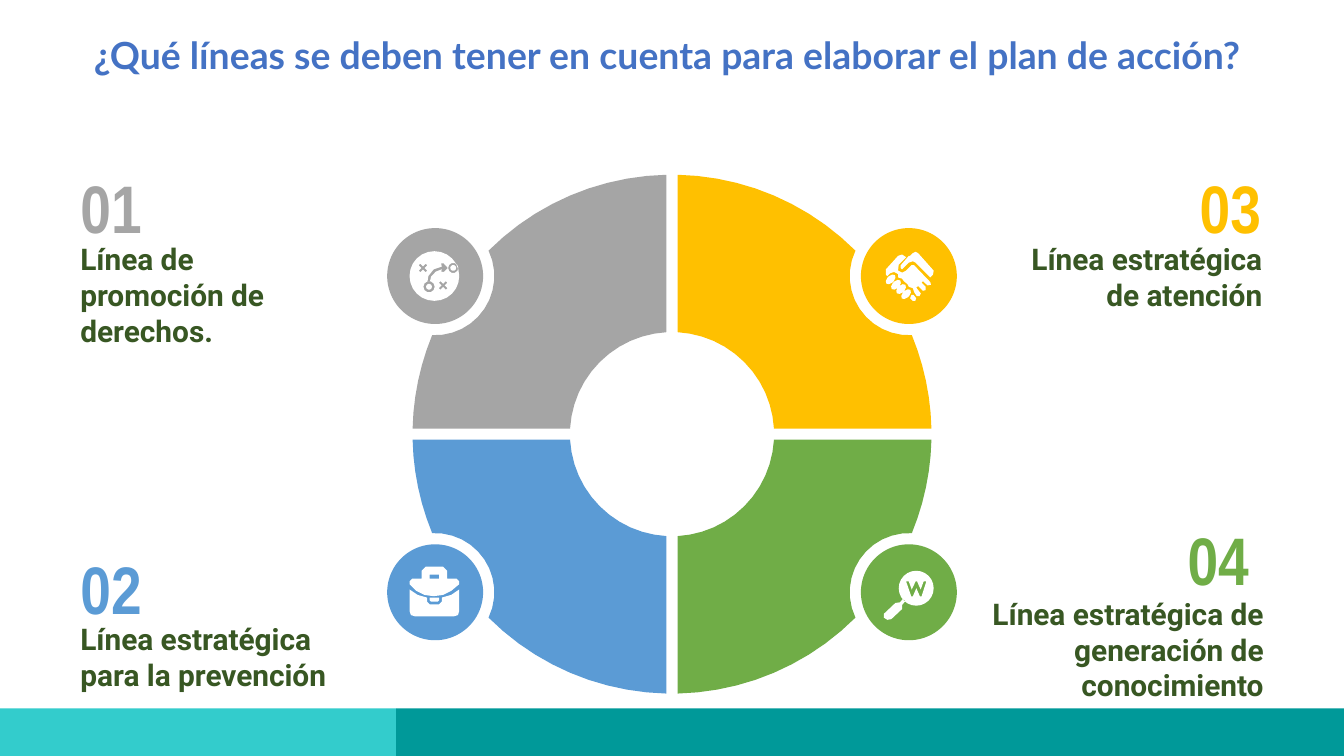
"""Build a slide with a four-part ring of action plan lines."""
import dataclasses
import math

import pptx
import pptx.dml.color
import pptx.enum.shapes
import pptx.enum.text
import pptx.util

Pt = pptx.util.Pt
ALIGN = pptx.enum.text.PP_ALIGN
KIND = pptx.enum.shapes.MSO_SHAPE


@dataclasses.dataclass(frozen=True)
class Theme:
    """Colours, fonts and type sizes."""
    title: tuple = ("Lato", 20, "4472C4")
    body: tuple = ("Roboto", 16, "385723")
    num: tuple = ("Arial Narrow", 36)
    gray: str = "A5A5A5"
    blue: str = "5B9BD5"
    gold: str = "FFC000"
    green: str = "70AD47"
    white: str = "FFFFFF"
    aqua: str = "33CCCC"
    teal: str = "009999"


THEME = Theme()
TITLE = "¿Qué líneas se deben tener en cuenta para elaborar el plan de acción? "
CROSS = [(0, -1.2), (2, -3.2), (3.2, -2), (1.2, 0), (3.2, 2), (2, 3.2),
         (0, 1.2), (-2, 3.2), (-3.2, 2), (-1.2, 0), (-3.2, -2), (-2, -3.2)]
FINGER = [(-3.6, 1.2), (-2.4, -1.2), (-1.2, -2.4), (1.2, -3.6), (3.2, -3.2),
          (3.6, -1.2), (2.4, 1.2), (1.2, 2.4), (-1.2, 3.6), (-3.2, 3.2)]


def shift(pts, dx, dy):
    """Move points by an offset."""
    return [(x + dx, y + dy) for x, y in pts]


def arc(x, y, rad, start, end, steps):
    """Give points along an arc."""
    turns = [start + (end - start) * i / steps for i in range(steps + 1)]
    return [(x + rad * math.cos(t), y + rad * math.sin(t)) for t in turns]


def disc(x, y, rad, steps=10):
    """Give points around a full circle."""
    return arc(x, y, rad, 0, math.tau, steps)[:-1]


PLAY = [
    disc(-0.5, 0, 18.5, 24),
    disc(-4.5, 8, 4.2), disc(-4.5, 8, 2.2),
    disc(13.5, -6, 3.8), disc(13.5, -6, 2.2),
    shift(CROSS, -9, -6), shift(CROSS, 6, 7),
    [(-5.6, 4), (-5, 0), (-1, -5), (5, -7), (4.5, -9.3), (6.5, -9.3),
     (9.5, -6), (6.5, -3), (4.5, -3.3), (5, -5), (0.5, -3.2), (-3, 0.5),
     (-3.8, 4)],
]
CASE = [
    [(-19, -6), (-19, -8), (-17, -10), (-10, -10), (-10, -16), (-7, -19),
     (6, -19), (9, -16), (9, -10), (16, -10), (18, -8), (18, -6), (12, -1),
     (6, 2), (-1, 3), (-8, 2), (-14, -1)],
    [(-4, -13), (3, -13), (3, -10), (-4, -10)],
    [(-19, -2), (-13, 2), (-6, 4), (-6, 7), (-4, 9), (3, 9), (5, 7), (5, 4),
     (12, 2), (18, -2), (18, 14), (17, 17), (14, 18), (-15, 18), (-18, 17),
     (-19, 14)],
    [(-4, 4), (3, 4), (3, 6), (2, 7), (-3, 7), (-4, 6)],
]
HANDS = [shift(FINGER, x, y) for x, y in
         ((-13.5, 2.5), (-9.5, 6.5), (-5.7, 9.7), (-2, 13.5))] + [
    [(2, 14), (3.5, 14), (5.5, 16.5), (4.8, 18.5), (3, 18.5), (1, 16.5)],
    [(-5, -16), (-8, -15), (-17, -5), (-17, -1), (-16, 0), (-14, -2),
     (-11, -3), (-8, -1.5), (-8, 1), (-5, 2), (-3.5, 4), (-1, 6), (0, 8),
     (3, 9), (4, 12), (6, 15), (8, 15), (9, 13), (5.5, 8.5), (7, 7.5),
     (10.5, 11), (12.5, 10.5), (12.5, 8), (9.5, 5), (10.5, 3.8), (14, 7),
     (16.5, 6.5), (16, 4.5), (4, -8), (2, -8), (-2, -4), (-5, -2.5),
     (-8, -4), (-7.5, -8.5), (-2, -14)],
    [(5, -18), (3, -17), (1, -15), (0, -15), (-6, -8), (-6, -6), (-5, -5),
     (-4, -6), (0, -10), (3, -11), (5, -10), (16, 1), (18, -1), (18.5, -4),
     (7, -17)],
]
LENS = [
    disc(5.5, -3, 13, 24),
    [(-2, -8), (0, -8), (2.2, -2), (5, -8), (6.2, -8), (8.8, -2), (11, -8),
     (13, -8), (9.5, 3), (8.2, 3), (5.6, -3), (3, 3), (1.8, 3)],
    [(-18.5, 16), (-10, 8), (-6.5, 7.5), (-4.5, 5), (-2.5, 6.5), (-5, 9.5),
     (-5, 12.5), (-13, 20), (-16, 20.5), (-18.5, 19)],
]
LINES = [
    ("01", "Línea de promoción de derechos.", THEME.gray, (-1, -1), PLAY,
     (36, 75.6), (36, 121.7, 152)),
    ("02", "Línea estratégica para la prevención", THEME.blue, (-1, 1), CASE,
     (36, 279.4), (36, 325.4, 152)),
    ("03", "Línea estratégica de atención", THEME.gold, (1, -1), HANDS,
     (579.6, 75.6), (531.4, 121.7, 152)),
    ("04", "Línea estratégica de generación de conocimiento", THEME.green,
     (1, 1), LENS, (573.1, 264.2), (519.1, 311.8, 165)),
]
MID = (360, 232.6)
OUTER, INNER, GAP = 139, 54.7, 3
BADGE, NOTCH, REACH = 25.7, 31.7, (126.9, 84.7)
UNIT = 0.72


def wedge():
    """Outline a quarter ring with a round notch, as offsets from the middle."""
    dist, lean = math.hypot(*REACH), math.atan2(REACH[1], REACH[0])
    half = math.acos((OUTER**2 + dist**2 - NOTCH**2) / (2 * OUTER * dist))
    bite = math.acos((NOTCH**2 + dist**2 - OUTER**2) / (2 * NOTCH * dist))
    out, inn = math.asin(GAP / OUTER), math.asin(GAP / INNER)
    back, right = lean + math.pi, math.pi / 2
    return (arc(0, 0, OUTER, out, lean - half, 6)
            + arc(*REACH, NOTCH, back + bite, back - bite, 12)
            + arc(0, 0, OUTER, lean + half, right - out, 10)
            + arc(0, 0, INNER, right - inn, inn, 12))


def paint(shape, color):
    """Give a shape a flat fill with no line or shadow."""
    shape.shadow.inherit = False
    shape.fill.solid()
    shape.fill.fore_color.rgb = pptx.dml.color.RGBColor.from_string(color)
    shape.line.fill.background()


def trace(shapes, loops, spot, scale, color):
    """Draw closed loops, scaled about a spot, as one freeform."""
    (left, top), (wide, high) = spot, scale
    loops = [[(Pt(left + wide * x), Pt(top + high * y)) for x, y in loop]
             for loop in loops]
    pen = shapes.build_freeform(*loops[0][0], scale=1.0)
    for i, loop in enumerate(loops):
        if i:
            pen.move_to(*loop[0])
        pen.add_line_segments(loop[1:], close=True)
    paint(pen.convert_to_shape(), color)


def block(shapes, kind, box, color):
    """Add a flat preset shape."""
    paint(shapes.add_shape(kind, *map(Pt, box)), color)


def write(shape, text, font, size, color, align):
    """Set and format the text of a shape."""
    frame = shape.text_frame
    frame.text = text
    frame.word_wrap = True
    frame.auto_size = pptx.enum.text.MSO_AUTO_SIZE.NONE
    frame.vertical_anchor = pptx.enum.text.MSO_ANCHOR.TOP
    for side in ("left", "top", "right", "bottom"):
        setattr(frame, "margin_" + side, Pt(7.2))
    para = frame.paragraphs[0]
    para.alignment = align
    face = para.runs[0].font
    face.name, face.size, face.bold = font, Pt(size), True
    face.color.rgb = pptx.dml.color.RGBColor.from_string(color)
    return para


def main():
    """Build and save the slide."""
    deck = pptx.Presentation()
    deck.slide_width, deck.slide_height = Pt(720), Pt(405)
    slide = deck.slides.add_slide(deck.slide_layouts[5])
    shapes, head = slide.shapes, slide.shapes.title
    head.left, head.top, head.width, head.height = map(Pt, (24.5, 10, 671, 59))
    write(head, TITLE, *THEME.title, ALIGN.CENTER)
    for num, text, color, (sx, sy), icon, spot, (left, top, wide) in LINES:
        align = ALIGN.LEFT if sx < 0 else ALIGN.RIGHT
        trace(shapes, [wedge()], MID, (sx, sy), color)
        hub = (MID[0] + sx * REACH[0], MID[1] + sy * REACH[1])
        block(shapes, KIND.OVAL, (hub[0] - BADGE, hub[1] - BADGE,
                                  2 * BADGE, 2 * BADGE), color)
        trace(shapes, icon, hub, (UNIT, UNIT), THEME.white)
        label = shapes.add_textbox(*map(Pt, (*spot, 103, 30)))
        para = write(label, num, *THEME.num, color, align)
        para.line_spacing, para.space_after = 1.15, Pt(16)
        note = shapes.add_textbox(*map(Pt, (left, top, wide, 45.4)))
        write(note, text, *THEME.body, align)
    block(shapes, KIND.RECTANGLE, (0, 379.6, 212.2, 25.4), THEME.aqua)
    block(shapes, KIND.RECTANGLE, (212.2, 379.6, 507.8, 25.4), THEME.teal)
    deck.save("out.pptx")


if __name__ == "__main__":
    main()
